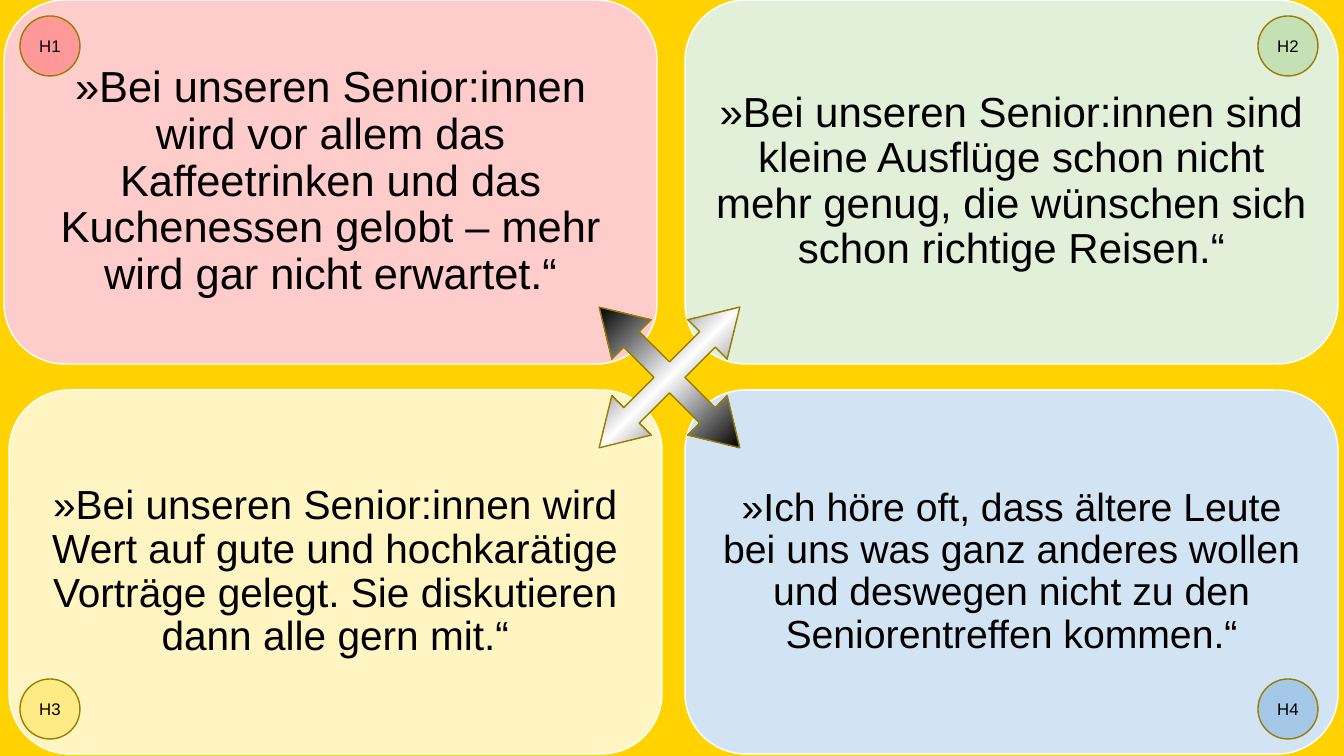
from pptx import Presentation
from pptx.dml.color import RGBColor
from pptx.enum.shapes import MSO_SHAPE
from pptx.enum.text import MSO_ANCHOR, PP_ALIGN
from pptx.oxml import parse_xml
from pptx.oxml.ns import nsdecls
from pptx.util import Emu, Pt

THEME = {
    "back": "FFD200", "ink": "000000", "edge": "FFFFFF", "rim": "977E00",
    "font": "Arial", "tag": 12,
    "pink": ("FFCCCC", "FF9999"), "green": ("E2F0D9", "C5E0B4"),
    "gold": ("FFF5C2", "FFEB85"), "blue": ("D2E4F4", "A5C8E8"),
}
STOPS = [(0, "000000"), (25, "000000"), (50, "FFFFFF"), (75, "000000"), (100, "000000")]

# Label, tint, panel corner, tag corner, type size, quote
VIEWS = [
    ("H1", "pink", (4, 0), (20, 16), 31,
     "»Bei unseren Senior:innen wird vor allem das Kaffeetrinken und das "
     "Kuchenessen gelobt – mehr wird gar nicht erwartet.“"),
    ("H2", "green", (685, 0), (1258, 16), 30,
     "»Bei unseren Senior:innen sind kleine Ausflüge schon nicht mehr genug, "
     "die wünschen sich schon richtige Reisen.“"),
    ("H3", "gold", (9, 390), (20, 679), 29,
     "»Bei unseren Senior:innen wird Wert auf gute und hochkarätige Vorträge "
     "gelegt. Sie diskutieren dann alle gern mit.“"),
    ("H4", "blue", (685, 390), (1258, 679), 28,
     "»Ich höre oft, dass ältere Leute bei uns was ganz anderes wollen und "
     "deswegen nicht zu den Seniorentreffen kommen.“"),
]


def px(n):
    return Emu(round(n * 914400 / 100.8))


def rgb(name):
    return RGBColor.from_string(THEME.get(name, name))


def apply(item, form):
    for key, value in form.items():
        setattr(item, key, value)


def add_form(slide, kind, corner, size, line, fill=None):
    shape = slide.shapes.add_shape(kind, *map(px, corner + size))
    shape.shadow.inherit = False
    if fill:
        shape.fill.solid()
        shape.fill.fore_color.rgb = rgb(fill)
    shape.line.color.rgb = rgb(line)
    shape.line.width = Pt(1)
    return shape


def add_text(shape, text, size, inset, space=1.0):
    frame = shape.text_frame
    sides = ("left", "top", "right", "bottom")
    apply(frame, {f"margin_{side}": px(inset) for side in sides})
    apply(frame, {"word_wrap": True, "vertical_anchor": MSO_ANCHOR.MIDDLE})
    para = frame.paragraphs[0]
    apply(para, {"alignment": PP_ALIGN.CENTER, "line_spacing": space})
    run = para.add_run()
    run.text = text
    apply(run.font, {"name": THEME["font"], "size": Pt(size)})
    run.font.color.rgb = rgb("ink")


def add_panel(slide, corner, fill, text, size):
    panel = add_form(slide, MSO_SHAPE.ROUNDED_RECTANGLE, corner, (653, 364), "edge", fill)
    add_text(panel, text, size, 12, 0.9)


def add_tag(slide, corner, fill, text):
    tag = add_form(slide, MSO_SHAPE.OVAL, corner, (60, 60), "rim", fill)
    add_text(tag, text, THEME["tag"], 0)


def add_cross(slide):
    cross = add_form(slide, MSO_SHAPE.QUAD_ARROW, (570, 278), (199, 199), "rim")
    cross.rotation = 45
    for i, ratio in enumerate((0.11, 0.14, 0.23)):
        cross.adjustments[i] = ratio
    # Gradient spreading from a corner
    stops = "".join(
        f'<a:gs pos="{pos * 1000}"><a:srgbClr val="{tone}"/></a:gs>' for pos, tone in STOPS)
    grad = parse_xml(
        f'<a:gradFill {nsdecls("a")} rotWithShape="1"><a:gsLst>{stops}</a:gsLst>'
        '<a:path path="circle"><a:fillToRect l="100000" t="100000"/></a:path>'
        '<a:tileRect r="-100000" b="-100000"/></a:gradFill>')
    cross._element.spPr.prstGeom.addnext(grad)


def main():
    deck = Presentation()
    apply(deck, {"slide_width": px(1344), "slide_height": px(756)})
    slide = deck.slides.add_slide(deck.slide_layouts[6])
    slide.background.fill.solid()
    slide.background.fill.fore_color.rgb = rgb("back")

    # Four quotes, then the crossed arrows, then the tags on top
    for label, tint, corner, spot, size, quote in VIEWS:
        add_panel(slide, corner, THEME[tint][0], quote, size)
    add_cross(slide)
    for label, tint, corner, spot, size, quote in VIEWS:
        add_tag(slide, spot, THEME[tint][1], label)

    deck.save("out.pptx")


if __name__ == "__main__":
    main()
